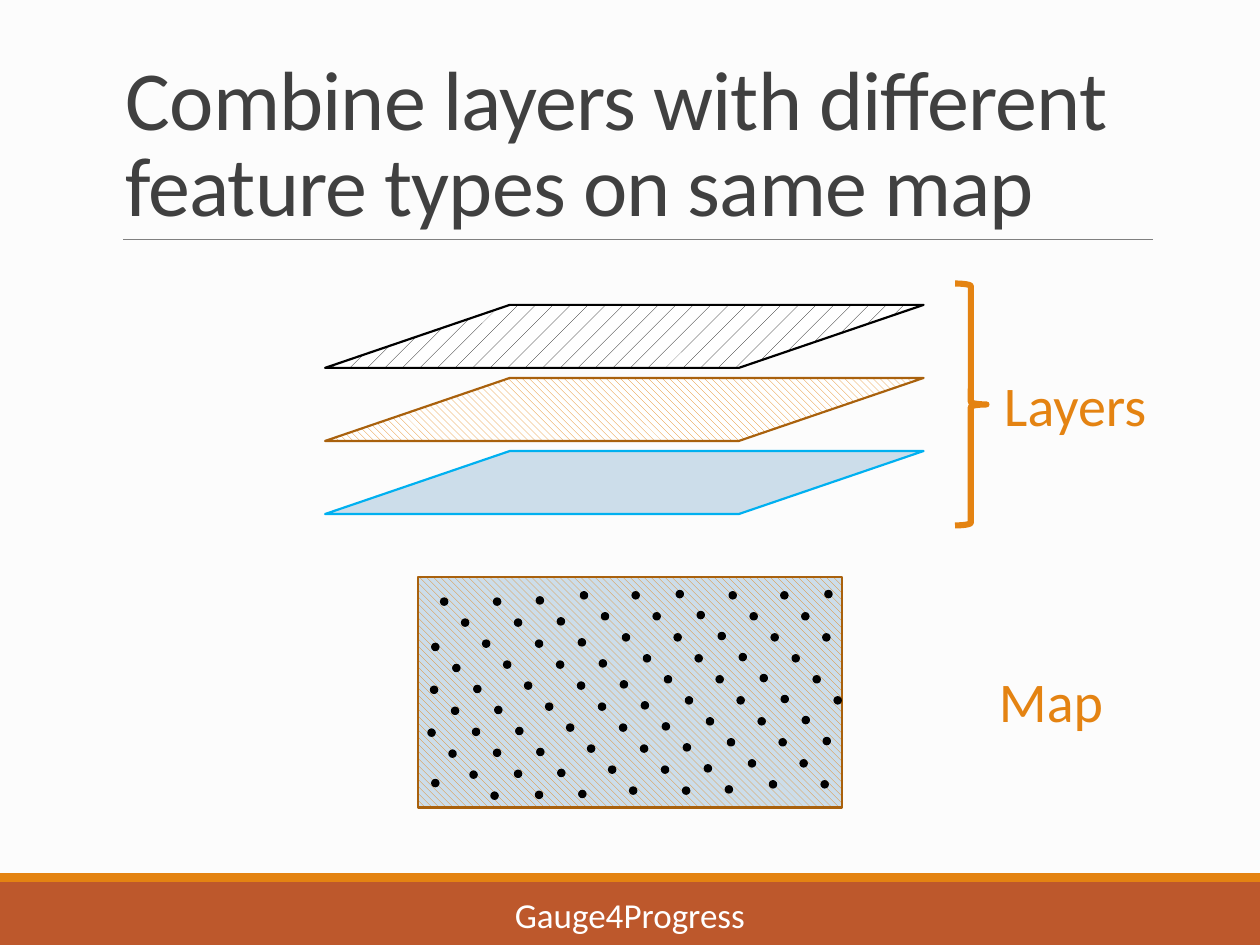
"""Build the slide that combines map layers of different feature types."""
from dataclasses import dataclass
from typing import Optional

from lxml.etree import SubElement
from pptx import Presentation
from pptx.dml.color import RGBColor
from pptx.enum.dml import MSO_PATTERN as Pattern
from pptx.enum.shapes import MSO_CONNECTOR as Connector, MSO_SHAPE as Shape
from pptx.enum.text import MSO_ANCHOR as Anchor, MSO_AUTO_SIZE as AutoSize, PP_ALIGN as Align
from pptx.oxml.ns import qn
from pptx.util import Inches, Pt


@dataclass(frozen=True)
class Theme:
    font: str = "Calibri"
    page: str = "FCFCFC"
    bar: str = "BD582C"
    accent: str = "E48312"
    outline: str = "A9610D"
    area: str = "CCDDEA"
    water: str = "00B0F0"
    ink: str = "404040"
    rule: str = "808080"
    black: str = "000000"
    white: str = "FFFFFF"
    title_size: float = 48
    label_size: float = 32
    footer_size: float = 20


@dataclass(frozen=True)
class Box:
    left: float
    top: float
    width: float
    height: float

    def lengths(self):
        return [Inches(value) for value in (self.left, self.top, self.width, self.height)]


@dataclass(frozen=True)
class Style:
    fill: Optional[str] = None
    line: Optional[str] = None
    line_width: float = 1.25
    pattern: Optional[Pattern] = None
    back: Optional[str] = None


@dataclass(frozen=True)
class DotRow:
    left: float
    top: float
    count: int


THEME = Theme()
DOT_SIZE = 0.05
DOT_STEP = 1 / 6
DOT_ROWS = [
    DotRow(3.5, 4.75, 10), DotRow(3.92, 4.75, 10), DotRow(4.26, 4.74, 10),
    DotRow(4.61, 4.7, 10), DotRow(5.02, 4.7, 10), DotRow(5.37, 4.69, 8),
    DotRow(5.79, 4.7, 6), DotRow(6.2, 4.7, 3), DotRow(6.55, 4.69, 1),
    DotRow(3.4, 5.79, 4), DotRow(3.42, 5.45, 6), DotRow(3.43, 5.11, 8),
    DotRow(3.43, 6.19, 1),
]
LAYERS = [
    Style(THEME.black, THEME.black, pattern=Pattern.PERCENT_5, back=THEME.white),
    Style(THEME.accent, THEME.outline, pattern=Pattern.WIDE_DOWNWARD_DIAGONAL, back=THEME.white),
    Style(THEME.area, THEME.water),
]


def rgb(color: str) -> RGBColor:
    return RGBColor.from_string(color)


def add_shape(shapes, kind: Shape, box: Box, style: Style, slant: Optional[float] = None) -> None:
    shape = shapes.add_shape(kind, *box.lengths())
    shape.shadow.inherit = False
    if slant is not None:
        shape.adjustments[0] = slant
    if style.pattern is not None:
        shape.fill.patterned()
        shape.fill.pattern = style.pattern
        shape.fill.fore_color.rgb = rgb(style.fill)
        shape.fill.back_color.rgb = rgb(style.back)
    elif style.fill:
        shape.fill.solid()
        shape.fill.fore_color.rgb = rgb(style.fill)
    else:
        shape.fill.background()
    if style.line:
        shape.line.color.rgb = rgb(style.line)
        shape.line.width = Pt(style.line_width)
    else:
        shape.line.fill.background()


def add_text(shapes, text: str, box: Box, *, size: float, color: str, anchor=Anchor.TOP,
             align=Align.LEFT, wrap: bool = True, line_spacing: Optional[float] = None,
             tracking: Optional[float] = None) -> None:
    frame = shapes.add_textbox(*box.lengths()).text_frame
    frame.word_wrap = wrap
    frame.auto_size = AutoSize.NONE if wrap else AutoSize.SHAPE_TO_FIT_TEXT
    frame.vertical_anchor = anchor
    para = frame.paragraphs[0]
    para.alignment = align
    if line_spacing is not None:
        para.line_spacing = line_spacing
    span = para.add_run()
    span.text = text
    span.font.name = THEME.font
    span.font.size = Pt(size)
    span.font.color.rgb = rgb(color)
    if tracking is not None:
        span.font._element.set("spc", str(round(tracking * 100)))


def add_rule(shapes, left: float, right: float, top: float) -> None:
    rule = shapes.add_connector(
        Connector.STRAIGHT, Inches(left), Inches(top), Inches(right), Inches(top))
    rule.line.color.rgb = rgb(THEME.rule)
    rule.line.width = Pt(0.5)
    SubElement(rule._element.spPr, qn("a:effectLst"))


def add_frame(shapes) -> None:
    add_shape(shapes, Shape.RECTANGLE, Box(0, 7, 10, 0.5), Style(THEME.bar))
    add_shape(shapes, Shape.RECTANGLE, Box(0, 6.93, 10, 0.07), Style(THEME.accent))
    add_rule(shapes, 0.98, 9.15, 1.9)
    add_text(shapes, "Combine layers with different feature types on same map",
             Box(0.9, 0.31, 8.25, 1.59), size=THEME.title_size, color=THEME.ink,
             anchor=Anchor.BOTTOM, line_spacing=0.85, tracking=-0.5)
    add_text(shapes, "Gauge4Progress", Box(3.02, 7.06, 3.96, 0.4), size=THEME.footer_size,
             color=THEME.white, anchor=Anchor.MIDDLE, align=Align.CENTER)


def add_layers(shapes) -> None:
    for index, style in enumerate(LAYERS):
        box = Box(2.58, 2.42 + 0.58 * index, 4.75, 0.5)
        add_shape(shapes, Shape.PARALLELOGRAM, box, style, slant=2.932)


def add_map(shapes) -> None:
    group = shapes.add_group_shape().shapes
    hatch = Style(THEME.accent, THEME.outline,
                  pattern=Pattern.WIDE_DOWNWARD_DIAGONAL, back=THEME.area)
    add_shape(group, Shape.PARALLELOGRAM, Box(3.32, 4.58, 3.36, 1.83), hatch, slant=0)
    dot = Style(THEME.black, THEME.black)
    for row in DOT_ROWS:
        for index in range(row.count):
            shift = index * DOT_STEP
            box = Box(row.left + shift, row.top + shift, DOT_SIZE, DOT_SIZE)
            add_shape(group, Shape.OVAL, box, dot)


def add_labels(shapes) -> None:
    add_shape(shapes, Shape.RIGHT_BRACE, Box(7.58, 2.25, 0.25, 1.92),
              Style(line=THEME.accent, line_width=3.5))
    for text, box in (("Layers", Box(7.87, 2.89, 1.34, 0.64)),
                      ("Map", Box(7.83, 5.24, 1.04, 0.64))):
        add_text(shapes, text, box, size=THEME.label_size, color=THEME.accent, wrap=False)


def main() -> None:
    deck = Presentation()
    deck.slide_width, deck.slide_height = Inches(10), Inches(7.5)
    page = deck.slides.add_slide(deck.slide_layouts[6])
    page.background.fill.solid()
    page.background.fill.fore_color.rgb = rgb(THEME.page)
    for draw in (add_frame, add_layers, add_map, add_labels):
        draw(page.shapes)
    deck.save("out.pptx")


if __name__ == "__main__":
    main()
